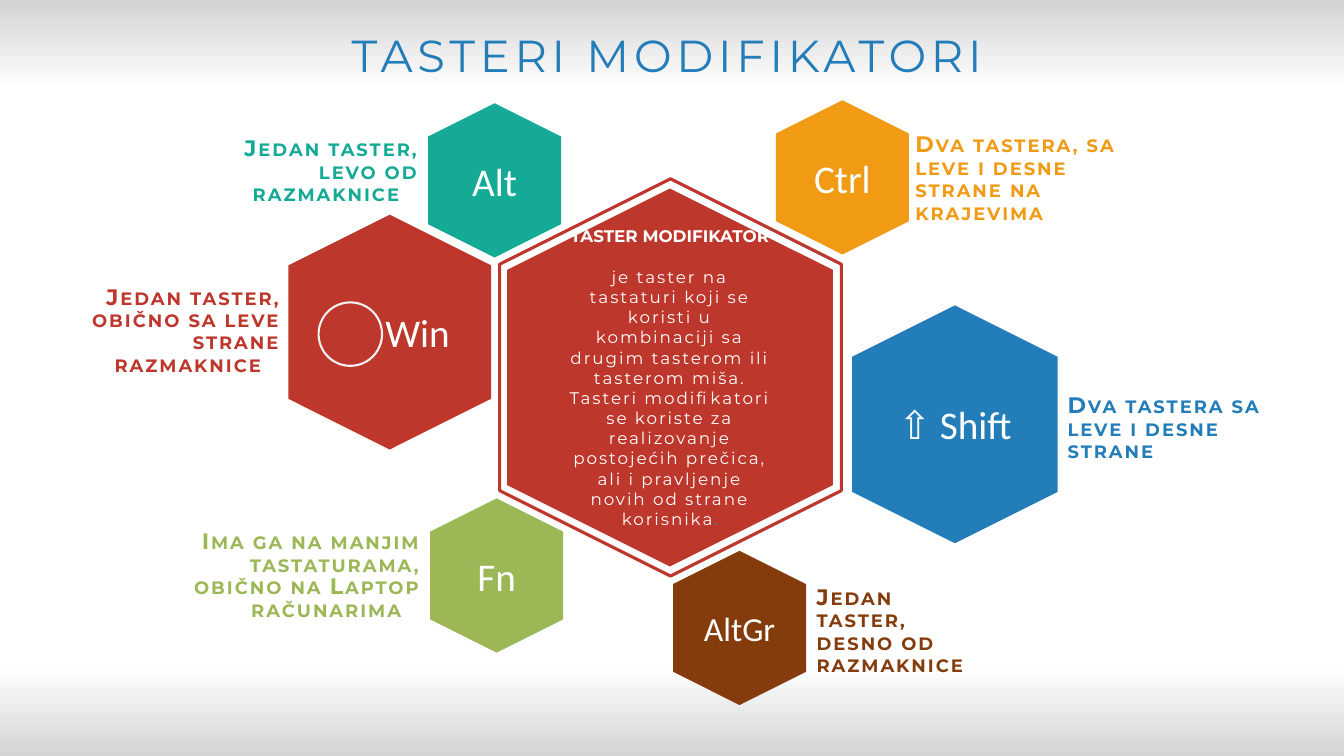
"""Build the slide on modifier keys: hexagon keys around a central definition."""
from dataclasses import dataclass

from lxml import etree
from pptx import Presentation
from pptx import util as u
from pptx.dml.color import RGBColor
from pptx.enum import shapes, text
from pptx.oxml.ns import qn

LEFT, MID, RIGHT = text.PP_ALIGN.LEFT, text.PP_ALIGN.CENTER, text.PP_ALIGN.RIGHT


@dataclass(frozen=True)
class Theme:
    red: str = "BE372C"
    blue: str = "237DB9"
    gold: str = "F09B13"
    teal: str = "15AA95"
    brown: str = "843C0C"
    green: str = "9CB756"
    white: str = "FFFFFF"
    pale: str = "F2F2F2"
    fade: tuple = ((0, "D4D4D4"), (12, "FFFFFF"), (88, "FFFFFF"), (100, "D4D4D5"))
    sans: str = "Montserrat"
    plain: str = "Calibri"
    title: float = 32
    key: float = 28
    small: float = 24
    note: float = 16
    body: float = 12


T = Theme()


@dataclass(frozen=True)
class Box:
    x: float
    y: float
    w: float
    h: float

    def place(self) -> tuple:
        return tuple(u.Inches(v) for v in (self.x, self.y, self.w, self.h))


@dataclass(frozen=True)
class Style:
    size: float
    tint: str
    face: str = T.sans
    bold: bool = False
    gap: float = 0
    caps: bool = False


@dataclass(frozen=True)
class Key:
    name: str
    tint: str
    box: Box
    note: str
    spot: Box
    side: text.PP_ALIGN = LEFT
    align: text.PP_ALIGN = MID
    size: float = T.key


KEYS = (
    Key("⇧ Shift", T.blue, Box(8.29, 3.19, 2.36, 2.04),
        "Dva tastera sa leve i desne strane", Box(10.49, 3.88, 2.5, 0.77)),
    Key("Ctrl", T.gold, Box(7.59, 1.1, 1.53, 1.32),
        "Dva tastera, sa leve i desne strane na krajevima", Box(8.98, 1.29, 2.59, 1)),
    Key("Alt", T.teal, Box(4.14, 1.13, 1.53, 1.32),
        "Jedan taster, levo od razmaknice", Box(1.8, 1.33, 2.45, 0.77), RIGHT),
    Key("AltGr", T.brown, Box(6.57, 5.57, 1.53, 1.32),
        "Jedan taster, desno od razmaknice", Box(8, 5.78, 1.81, 1), size=T.small),
    Key("Win", T.red, Box(2.7, 2.29, 2.33, 2.01),
        "Jedan taster, obično sa leve strane razmaknice", Box(0.35, 2.8, 2.53, 1),
        RIGHT, RIGHT),
    Key("Fn", T.green, Box(4.16, 5.05, 1.53, 1.32),
        "Ima ga na manjim tastaturama, obično na Laptop računarima",
        Box(1.5, 5.23, 2.77, 1), RIGHT),
)
HEAD = "TASTER MODIFIKATOR"
BODY = (
    "je taster na tastaturi koji se koristi u kombinaciji sa drugim tasterom ili "
    "tasterom miša. Tasteri modifikatori se koriste za realizovanje postojećih "
    "prečica, ali i pravljenje novih od strane korisnika"
)


def rgb(code: str) -> RGBColor:
    """Turn a hex code into a colour."""
    return RGBColor.from_string(code)


def write(para, words: str, style: Style, align=LEFT) -> None:
    """Put styled words in a paragraph."""
    para.add_run().text = words
    para.alignment = align
    font = para.font
    font.name, font.size, font.bold = style.face, u.Pt(style.size), style.bold
    font.color.rgb = rgb(style.tint)
    props = para._p.get_or_add_pPr().find(qn("a:defRPr"))
    if style.gap:
        props.set("spc", str(round(style.gap * 100)))
    if style.caps:
        props.set("cap", "small")


def label(slide, box: Box, words: str, style: Style, align=LEFT, wrap=True):
    """Add a text box and return its paragraph."""
    frame = slide.shapes.add_textbox(*box.place()).text_frame
    frame.word_wrap = wrap
    frame.auto_size = text.MSO_AUTO_SIZE.SHAPE_TO_FIT_TEXT
    write(frame.paragraphs[0], words, style, align)
    return frame.paragraphs[0]


def form(slide, kind, box: Box, fill: str = "", line: str = "", width: float = 0):
    """Add a flat shape with an optional fill and outline."""
    shape = slide.shapes.add_shape(kind, *box.place())
    shape.shadow.inherit = False
    if fill:
        shape.fill.solid()
        shape.fill.fore_color.rgb = rgb(fill)
    else:
        shape.fill.background()
    if line:
        shape.line.color.rgb = rgb(line)
        shape.line.width = u.Pt(width)
    else:
        shape.line.fill.background()
    return shape


def hexa(slide, box: Box, fill: str = "", line: str = "", width: float = 0):
    """Add a hexagon standing on its point and return its text frame."""
    shape = form(slide, shapes.MSO_SHAPE.HEXAGON, box, fill, line, width)
    shape.rotation = 90
    frame = shape.text_frame
    frame.vertical_anchor = text.MSO_ANCHOR.MIDDLE
    frame._txBody.bodyPr.set("vert", "vert270")
    return frame


def shade(slide) -> None:
    """Fade the background at the top and bottom edges."""
    fill = slide.background.fill
    fill.gradient()
    fill.gradient_angle = 270
    stops = next(slide._element.iter(qn("a:gsLst")))
    stops[:] = []
    for pos, code in T.fade:
        stop = etree.SubElement(stops, qn("a:gs"), pos=str(pos * 1000))
        etree.SubElement(stop, qn("a:srgbClr"), val=code)


def draw(slide, key: Key) -> None:
    """Draw a key and its note."""
    frame = hexa(slide, key.box, key.tint)
    write(frame.paragraphs[0], key.name, Style(key.size, T.white, T.plain), key.align)
    style = Style(T.note, key.tint, bold=True, gap=1.4, caps=True)
    para = label(slide, key.spot, key.note, style, key.side)
    para.line_spacing = u.Pt(16)


def core(slide) -> None:
    """Draw the central definition and its outline."""
    frame = hexa(slide, Box(4.77, 2.13, 3.75, 3.23), T.red)
    head = frame.paragraphs[0]
    write(head, HEAD, Style(T.body, T.white, bold=True), MID)
    head.space_after = u.Pt(14.6)
    body = frame.add_paragraph()
    write(body, BODY, Style(T.body, T.white, gap=1.4), MID)
    dot = body.add_run()
    dot.text = "."
    dot.font.color.rgb = rgb(T.teal)
    hexa(slide, Box(4.68, 2.05, 3.94, 3.39), line=T.red, width=2.25)


def main() -> None:
    """Build and save the slide."""
    deck = Presentation()
    deck.slide_width, deck.slide_height = u.Inches(13.33), u.Inches(7.5)
    slide = deck.slides.add_slide(deck.slide_layouts[6])
    shade(slide)
    for key in KEYS:
        draw(slide, key)
    ring = Box(3.16, 3, 0.63, 0.63)
    form(slide, shapes.MSO_SHAPE.OVAL, ring, line=T.pale, width=1.5)
    core(slide)
    label(slide, Box(3.39, 0.23, 6.56, 0.64), "TASTERI MODIFIKATORI",
          Style(T.title, T.blue, gap=3.4), wrap=False)
    deck.save("out.pptx")


if __name__ == "__main__":
    main()
